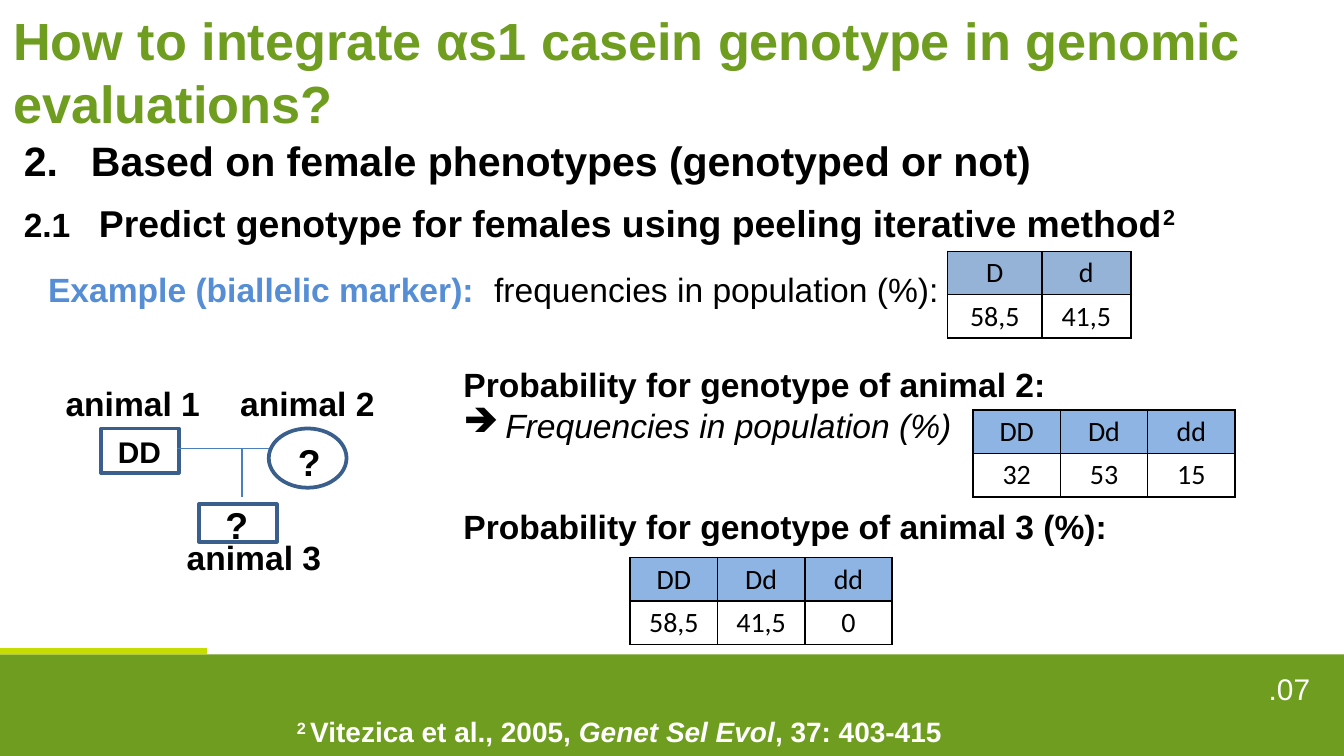
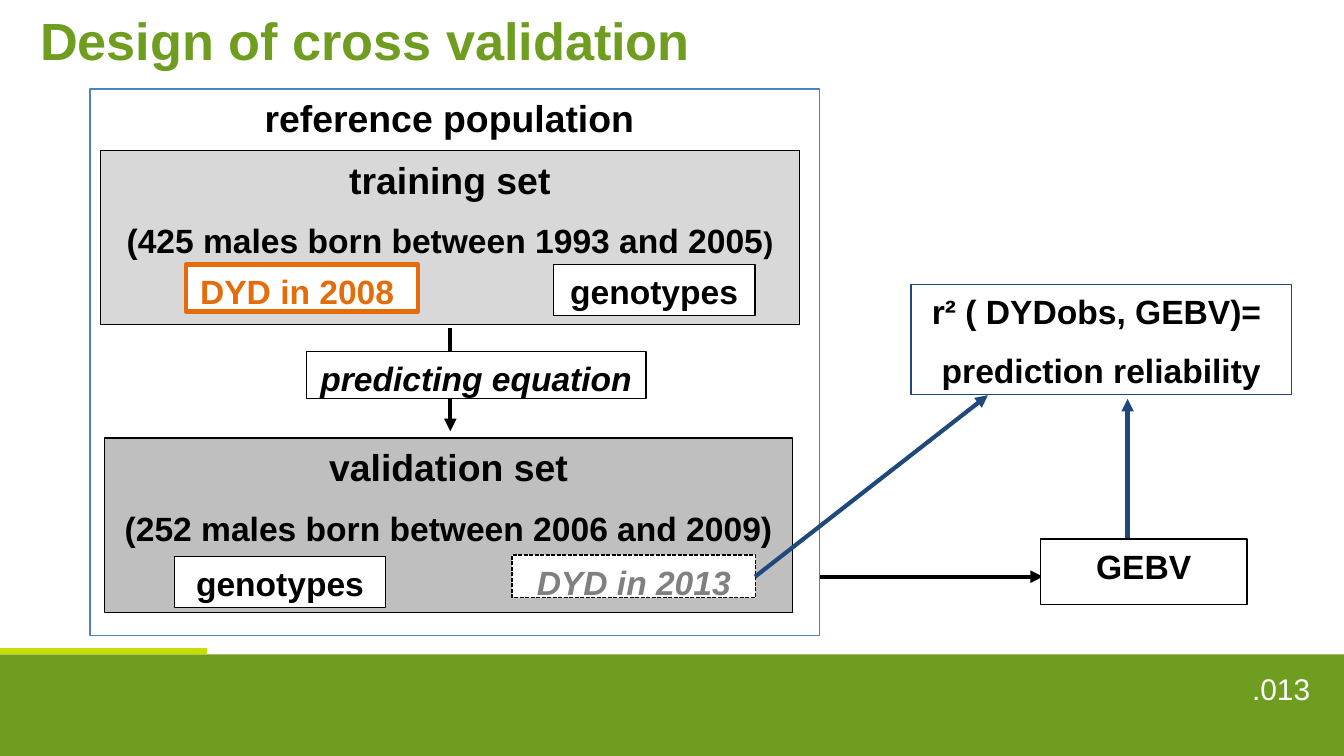
from dataclasses import dataclass, replace
from typing import Optional

from lxml import etree
from pptx import Presentation
from pptx.dml.color import RGBColor
from pptx.enum.dml import MSO_LINE
from pptx.enum.shapes import MSO_CONNECTOR, MSO_SHAPE
from pptx.enum.text import MSO_ANCHOR, PP_ALIGN
from pptx.oxml.ns import qn
from pptx.util import Cm, Pt

RECTANGLE, ELLIPSE = MSO_SHAPE.RECTANGLE, MSO_SHAPE.OVAL
STRAIGHT = MSO_CONNECTOR.STRAIGHT
LEFT, CENTER, RIGHT = PP_ALIGN.LEFT, PP_ALIGN.CENTER, PP_ALIGN.RIGHT
TOP = MSO_ANCHOR.TOP
SHORT_DASH = MSO_LINE.SQUARE_DOT

BLACK = RGBColor(0x00, 0x00, 0x00)
WHITE = RGBColor(0xFF, 0xFF, 0xFF)
GREEN = RGBColor(0x6F, 0x9D, 0x20)
LIME = RGBColor(0xC5, 0xDD, 0x01)
SKY = RGBColor(0x55, 0x8E, 0xD5)
ALLELE_BLUE = RGBColor(0x95, 0xB3, 0xD7)
GENOTYPE_BLUE = RGBColor(0x8E, 0xB4, 0xE3)
PEDIGREE_BLUE = RGBColor(0x3A, 0x5F, 0x8C)
LINK_BLUE = RGBColor(0x4B, 0x7E, 0xBC)
FRAME_BLUE = RGBColor(0x4F, 0x81, 0xBD)
NAVY = RGBColor(0x1F, 0x49, 0x7D)
ORANGE = RGBColor(0xE4, 0x6C, 0x0A)
GREY = RGBColor(0x80, 0x80, 0x80)
LIGHT_GREY = RGBColor(0xD8, 0xD8, 0xD8)
MID_GREY = RGBColor(0xBF, 0xBF, 0xBF)

PAGE_WIDTH, PAGE_HEIGHT = 25.4, 14.29
BAND_TOP = 12.37
ROW_HEIGHT = 0.82
BODY_FONT, TABLE_FONT = "Arial", "Calibri"


@dataclass(frozen=True)
class Area:
    """Left, top, width and height in centimetres."""
    left: float
    top: float
    width: float
    height: float

    def lengths(self) -> list:
        return [Cm(n) for n in (self.left, self.top, self.width, self.height)]


@dataclass(frozen=True)
class Span:
    text: str
    size: float = 18
    bold: bool = True
    italic: bool = False
    color: RGBColor = BLACK
    raised: bool = False
    font: str = BODY_FONT


@dataclass(frozen=True)
class Para:
    """One paragraph; hanging is in centimetres, before and after in points."""
    spans: tuple
    align: PP_ALIGN = LEFT
    before: float = 0
    after: float = 0
    hanging: float = 0
    bullet: str = ""
    number: int = 0


@dataclass(frozen=True)
class Outline:
    color: RGBColor
    width: float = 0.75
    dash: Optional[MSO_LINE] = None


@dataclass(frozen=True)
class Panel:
    area: Area
    paras: tuple = ()
    fill: RGBColor = WHITE
    outline: Optional[Outline] = None
    preset: MSO_SHAPE = RECTANGLE


@dataclass(frozen=True)
class Link:
    start: tuple
    end: tuple
    color: RGBColor = BLACK
    width: float = 2.25
    arrow: bool = True


@dataclass(frozen=True)
class Grid:
    left: float
    top: float
    columns: tuple
    rows: tuple
    header_fill: RGBColor = GENOTYPE_BLUE


THIN_BLACK = Outline(BLACK)
PEDIGREE_LINE = Outline(PEDIGREE_BLUE, 2)


def line(text: str, **style) -> tuple:
    return (Para((Span(text, **style),)),)


def centered(*spans: Span, after: float = 10) -> tuple:
    """One centred paragraph for each span."""
    return tuple(Para((span,), CENTER, after=after) for span in spans)


def add_bullet(para, item: Para) -> None:
    properties = para._p.get_or_add_pPr()
    if item.hanging:
        properties.set("marL", str(Cm(item.hanging)))
        properties.set("indent", str(-Cm(item.hanging)))
    if item.number:
        etree.SubElement(properties, qn("a:buAutoNum"),
                         type="arabicPeriod", startAt=str(item.number))
    elif item.bullet:
        etree.SubElement(properties, qn("a:buChar"), char=item.bullet)


def write(frame, paras: tuple) -> None:
    frame.word_wrap = True
    frame.vertical_anchor = TOP
    for index, item in enumerate(paras):
        para = frame.paragraphs[0] if index == 0 else frame.add_paragraph()
        para.alignment = item.align
        if item.before:
            para.space_before = Pt(item.before)
        if item.after:
            para.space_after = Pt(item.after)
        add_bullet(para, item)
        for span in item.spans:
            run = para.add_run()
            run.text = span.text
            font = run.font
            font.name, font.size = span.font, Pt(span.size)
            font.bold, font.italic = span.bold, span.italic
            font.color.rgb = span.color
            if span.raised:
                run._r.get_or_add_rPr().set("baseline", "30000")


def add_text(page, area: Area, paras: tuple) -> None:
    write(page.shapes.add_textbox(*area.lengths()).text_frame, paras)


def add_panel(page, panel: Panel) -> None:
    box = page.shapes.add_shape(panel.preset, *panel.area.lengths())
    box.shadow.inherit = False
    box.fill.solid()
    box.fill.fore_color.rgb = panel.fill
    if panel.outline:
        box.line.color.rgb = panel.outline.color
        box.line.width = Pt(panel.outline.width)
        if panel.outline.dash:
            box.line.dash_style = panel.outline.dash
    else:
        box.line.fill.background()
    write(box.text_frame, panel.paras)


def add_link(page, link: Link) -> None:
    ends = [Cm(n) for n in link.start + link.end]
    connector = page.shapes.add_connector(STRAIGHT, *ends)
    connector.line.color.rgb = link.color
    connector.line.width = Pt(link.width)
    if link.arrow:
        etree.SubElement(connector.line._get_or_add_ln(), qn("a:tailEnd"), type="triangle")
    etree.SubElement(connector._element.spPr, qn("a:effectLst"))


def add_borders(cell) -> None:
    properties = cell._tc.get_or_add_tcPr()
    for index, side in enumerate(("a:lnL", "a:lnR", "a:lnT", "a:lnB")):
        border = etree.Element(qn(side), w=str(Pt(1)))
        fill = etree.SubElement(border, qn("a:solidFill"))
        etree.SubElement(fill, qn("a:srgbClr"), val=str(BLACK))
        properties.insert(index, border)


def add_grid(page, grid: Grid) -> None:
    area = Area(grid.left, grid.top, sum(grid.columns), ROW_HEIGHT * len(grid.rows))
    table = page.shapes.add_table(len(grid.rows), len(grid.columns), *area.lengths()).table
    table.first_row = table.horz_banding = False
    for column, width in zip(table.columns, grid.columns):
        column.width = Cm(width)
    for r, values in enumerate(grid.rows):
        table.rows[r].height = Cm(ROW_HEIGHT)
        for c, value in enumerate(values):
            cell = table.cell(r, c)
            cell.margin_top = cell.margin_bottom = Cm(0.09)
            if r == 0:
                cell.fill.solid()
                cell.fill.fore_color.rgb = grid.header_fill
            else:
                cell.fill.background()
            add_borders(cell)
            span = Span(value, 15, bold=False, font=TABLE_FONT)
            write(cell.text_frame, centered(span, after=0))


DRAWERS = {Panel: add_panel, Link: add_link, Grid: add_grid}


def draw(page, *items) -> None:
    """Draw panels, links and grids from back to front."""
    for item in items:
        DRAWERS[type(item)](page, item)


def add_page(deck, number: str):
    """Blank slide with the footer band and its number."""
    page = deck.slides.add_slide(deck.slide_layouts[6])
    draw(page,
         Panel(Area(0, BAND_TOP, PAGE_WIDTH, PAGE_HEIGHT - BAND_TOP), fill=GREEN),
         Panel(Area(0, 12.25, 3.91, 0.12), fill=LIME))
    span = Span(number, 16, bold=False, color=WHITE)
    add_text(page, Area(21.89, 12.55, 3.12, 0.69), (Para((span,), RIGHT),))
    return page


def add_title(page, text: str, area: Area) -> None:
    add_panel(page, Panel(area, line(text, size=28, color=GREEN)))


def build_genotype_page(deck) -> None:
    page = add_page(deck, ".07")
    add_text(page, Area(0.2, 2.44, 25.1, 10.82), (
        Para((Span("Based on female phenotypes (genotyped or not)", 22),),
             hanging=1.27, number=2),
        Para((Span("2.1\t"),
              Span("Predict genotype for females using peeling iterative method", 20),
              Span("2", 20, raised=True)), before=8, hanging=1.42)))
    add_title(page, "How to integrate αs1 casein genotype in genomic evaluations?",
              Area(0, 0.03, 25.2, 2.64))
    note = Span("Vitezica et al., 2005, ", 15, color=WHITE)
    add_text(page, Area(5.36, 13.39, 14.81, 0.89), (Para((
        replace(note, text="2 ", raised=True), note,
        replace(note, text="Genet Sel Evol", italic=True),
        replace(note, text=", 37: 403-415"))),))
    add_text(page, Area(0.66, 4.95, 9.55, 1.02),
             line("Example (biallelic marker):", color=SKY))
    probabilities = (
        Para((Span("Probability for genotype of animal 2:"),)),
        Para((Span("Frequencies in population (%)", bold=False, italic=True),),
             hanging=0.79, bullet="➔"),
        Para((Span("Probability for genotype of animal 3 (%):"),), before=33))
    draw(page,
         Grid(17.91, 4.75, (1.78, 1.68), (("D", "d"), ("58,5", "41,5")), ALLELE_BLUE),
         Panel(Area(8.51, 6.76, 13.16, 3.84), probabilities),
         Panel(Area(3.76, 9.53, 1.47, 0.71), outline=PEDIGREE_LINE),
         Panel(Area(5.08, 8.1, 1.47, 1.12), outline=PEDIGREE_LINE, preset=ELLIPSE),
         Panel(Area(1.91, 8.1, 1.47, 0.84), outline=PEDIGREE_LINE),
         Link((3.35, 8.48), (5.08, 8.48), LINK_BLUE, 0.75, arrow=False),
         Link((4.57, 8.48), (4.57, 9.4), LINK_BLUE, 0.75, arrow=False))
    for text, size, left, top, width in (("?", 20, 5.38, 8.18, 1.04),
                                         ("DD", 16, 1.98, 8.08, 1.37),
                                         ("?", 20, 4.01, 9.37, 1.37)):
        add_text(page, Area(left, top, width, 1.19), line(text, size=size))
    for number, (left, top) in enumerate(((0.99, 7.11), (4.29, 7.11), (3.28, 10.03)), 1):
        add_text(page, Area(left, top, 3.51, 1.02), line(f"animal {number}"))
    add_text(page, Area(9.09, 4.95, 9.96, 1.02),
             line("frequencies in population (%):", bold=False))
    for left, top, values in ((18.39, 7.75, ("32", "53", "15")),
                              (11.91, 10.54, ("58,5", "41,5", "0"))):
        add_grid(page, Grid(left, top, (1.65,) * 3, (("DD", "Dd", "dd"), values)))


def build_validation_page(deck) -> None:
    page = add_page(deck, ".013")
    add_title(page, "Design of cross validation", Area(0.51, 0.03, 24.69, 1.45))
    genotypes = centered(Span("genotypes"))
    training = (*centered(Span("training set", 20)),
                Para((Span("(425 males born between 1993 and 2005"), Span(")", 16)),
                     CENTER, after=10))
    draw(page,
         Link((21.31, 10.19), (21.31, 7.54), NAVY),
         Panel(Area(1.7, 1.68, 13.79, 10.34),
               centered(Span("reference population ", 20)), outline=Outline(FRAME_BLUE)),
         Panel(Area(1.98, 8.28, 13, 3.3),
               centered(Span("validation set", 20),
                        Span("(252 males born between 2006 and 2009)")),
               MID_GREY, THIN_BLACK),
         Panel(Area(3.3, 10.52, 3.99, 0.97), genotypes, outline=THIN_BLACK),
         Panel(Area(1.9, 2.84, 13.21, 3.3), training, LIGHT_GREY, THIN_BLACK),
         Link((8.51, 6.2), (8.51, 6.93)),
         Panel(Area(5.79, 6.65, 6.42, 0.89),
               centered(Span("predicting equation", italic=True)), outline=THIN_BLACK),
         Link((8.51, 7.54), (8.51, 8.15)),
         Panel(Area(9.68, 10.49, 4.6, 0.81),
               centered(Span("DYD in 2013", italic=True, color=GREY)),
               outline=Outline(BLACK, dash=SHORT_DASH)),
         Link((15.49, 10.9), (19.71, 10.9)),
         Panel(Area(19.66, 10.19, 3.91, 1.24), centered(Span("GEBV")), outline=THIN_BLACK),
         Link((14.27, 10.9), (18.67, 7.47), NAVY),
         Panel(Area(3.51, 5, 4.39, 0.89),
               centered(Span("DYD in 2008 ", color=ORANGE), after=0),
               outline=Outline(ORANGE, 2.25)),
         Panel(Area(17.22, 5.38, 7.19, 2.08),
               centered(Span("r² ( DYDobs, GEBV)= "), Span("prediction reliability")),
               outline=Outline(NAVY)),
         Panel(Area(10.46, 5, 3.81, 0.97), genotypes, outline=THIN_BLACK))


def main() -> None:
    deck = Presentation()
    deck.slide_width, deck.slide_height = Cm(PAGE_WIDTH), Cm(PAGE_HEIGHT)
    build_genotype_page(deck)
    build_validation_page(deck)
    deck.save("out.pptx")


if __name__ == "__main__":
    main()
